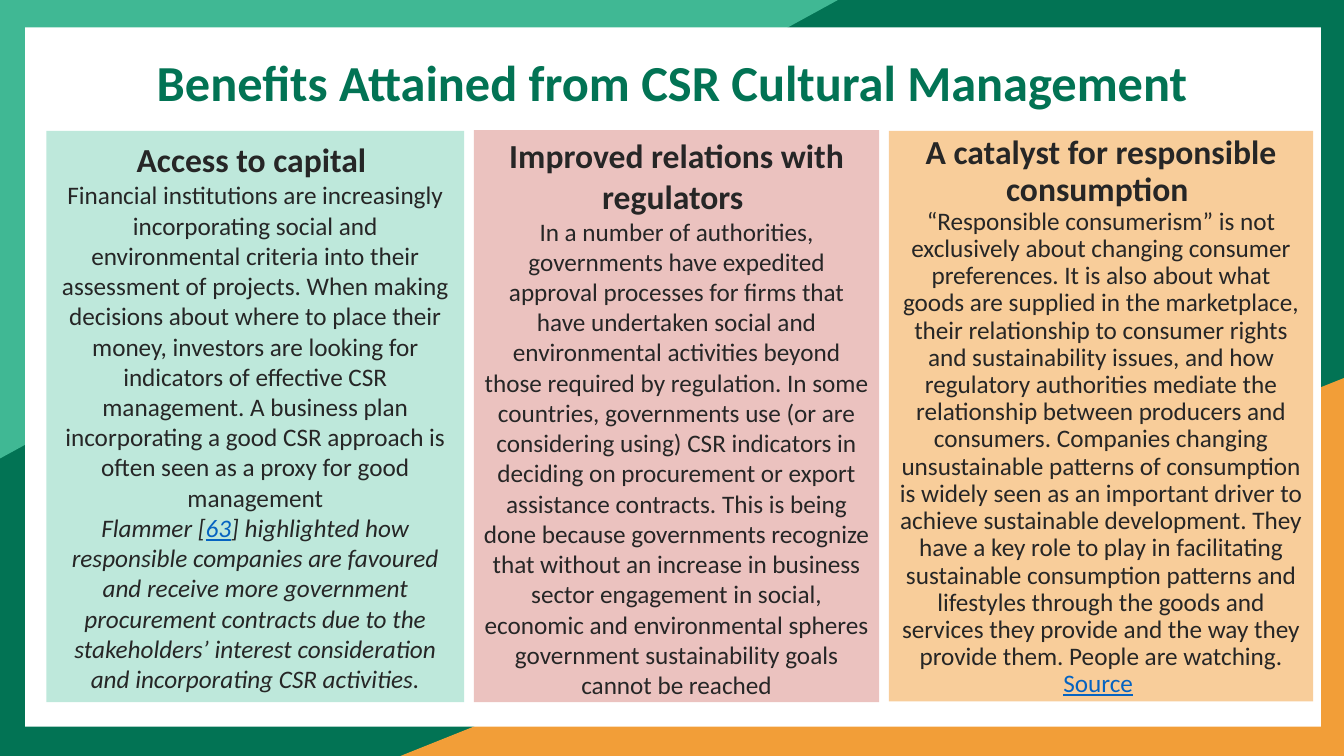
from pptx import Presentation
from pptx.dml.color import RGBColor
from pptx.enum.shapes import MSO_SHAPE
from pptx.enum.text import MSO_ANCHOR, PP_ALIGN
from pptx.util import Pt

RECTANGLE = MSO_SHAPE.RECTANGLE
TRIANGLE = MSO_SHAPE.ISOSCELES_TRIANGLE
TOP, MIDDLE = MSO_ANCHOR.TOP, MSO_ANCHOR.MIDDLE
CENTER, LEFT = PP_ALIGN.CENTER, PP_ALIGN.LEFT
COLORS = {
    "dark green": "027354", "orange": "F29E38", "green": "40B894",
    "white": "FFFFFF", "pink": "EBC2BF", "mint": "BEE8DB",
    "peach": "F8CD9A", "text": "262626", "link": "0563C1",
}

deck = Presentation()
deck.slide_width, deck.slide_height = Pt(960), Pt(540)
page = deck.slides.add_slide(deck.slide_layouts[6])


def add_block(kind, left, top, width, height, color):
    block = page.shapes.add_shape(kind, Pt(left), Pt(top), Pt(width), Pt(height))
    block.shadow.inherit = False
    block.fill.solid()
    block.fill.fore_color.rgb = RGBColor.from_string(COLORS[color])
    block.line.fill.background()
    return block


def write(paragraph, text, size, color="text", bold=False, italic=False,
          align=CENTER, spacing=1.0):
    """Fill a paragraph; text between | marks is shown as a link."""
    paragraph.alignment = align
    paragraph.line_spacing = spacing
    font = paragraph.font
    font.name, font.size, font.bold, font.italic = "Calibri", Pt(size), bold, italic
    for index, part in enumerate(text.split("|")):
        if part:
            span = paragraph.add_run()
            span.text = part
            is_link = index % 2 == 1
            span.font.underline = is_link
            span.font.color.rgb = RGBColor.from_string(
                COLORS["link" if is_link else color])


# Background
add_block(RECTANGLE, 0, 0, 960, 540, "dark green")
orange_corner = add_block(TRIANGLE, 286, 270, 674, 270, "orange")
green_corner = add_block(TRIANGLE, 0, 0, 598.5, 327.5, "green")
for corner in (orange_corner, green_corner):
    corner.adjustments[0] = 1
green_corner.rotation = 180
add_block(RECTANGLE, 18, 19.5, 925.5, 499.5, "white")

# Title
title = page.shapes.add_textbox(Pt(67), Pt(24.5), Pt(826.5), Pt(88.5)).text_frame
title.word_wrap = True
write(title.paragraphs[0], "Benefits Attained from CSR Cultural Management", 36,
      "dark green", bold=True, spacing=1.2)

# Benefit columns: left, top, width, height, fill, anchor, line spacing,
# heading, body, italic closing paragraph
columns = [
    (33.2, 93.5, 298.3, 408, "mint", MIDDLE, 1.0, "Access to capital ",
     "Financial institutions are increasingly incorporating social and "
     "environmental criteria into their assessment of projects. When making "
     "decisions about where to place their money, investors are looking for "
     "indicators of effective CSR management. A business plan incorporating a "
     "good CSR approach is often seen as a proxy for good management",
     "Flammer [|63|] highlighted how responsible companies are favoured and "
     "receive more government procurement contracts due to the stakeholders’ "
     "interest consideration and incorporating CSR activities."),
    (338.5, 93, 289.5, 408.5, "pink", TOP, 1.0, "Improved relations with regulators ",
     "In a number of authorities, governments have expedited approval processes "
     "for firms that have undertaken social and environmental activities beyond "
     "those required by regulation. In some countries, governments use (or are "
     "considering using) CSR indicators in deciding on procurement or export "
     "assistance contracts. This is being done because governments recognize "
     "that without an increase in business sector engagement in social, economic "
     "and environmental spheres government sustainability goals cannot be reached",
     None),
    (635, 93.5, 303, 407.5, "peach", TOP, 0.9, "A catalyst for responsible consumption ",
     "“Responsible consumerism” is not exclusively about changing consumer "
     "preferences. It is also about what goods are supplied in the marketplace, "
     "their relationship to consumer rights and sustainability issues, and how "
     "regulatory authorities mediate the relationship between producers and "
     "consumers. Companies changing unsustainable patterns of consumption is "
     "widely seen as an important driver to achieve sustainable development. They "
     "have a key role to play in facilitating sustainable consumption patterns "
     "and lifestyles through the goods and services they provide and the way they "
     "provide them. People are watching.",
     None),
]
for left, top, width, height, color, anchor, spacing, heading, body, closing in columns:
    frame = add_block(RECTANGLE, left, top, width, height, color).text_frame
    frame.word_wrap = True
    frame.vertical_anchor = anchor
    write(frame.paragraphs[0], heading, 24, bold=True, spacing=spacing)
    write(frame.add_paragraph(), body, 18, spacing=spacing)
    if closing:
        write(frame.add_paragraph(), closing, 18, italic=True, spacing=spacing)

# Source link
source = page.shapes.add_textbox(Pt(752.5), Pt(473), Pt(166), Pt(29)).text_frame
source.word_wrap = True
write(source.paragraphs[0], "|Source|", 18, align=LEFT)

deck.save("out.pptx")
